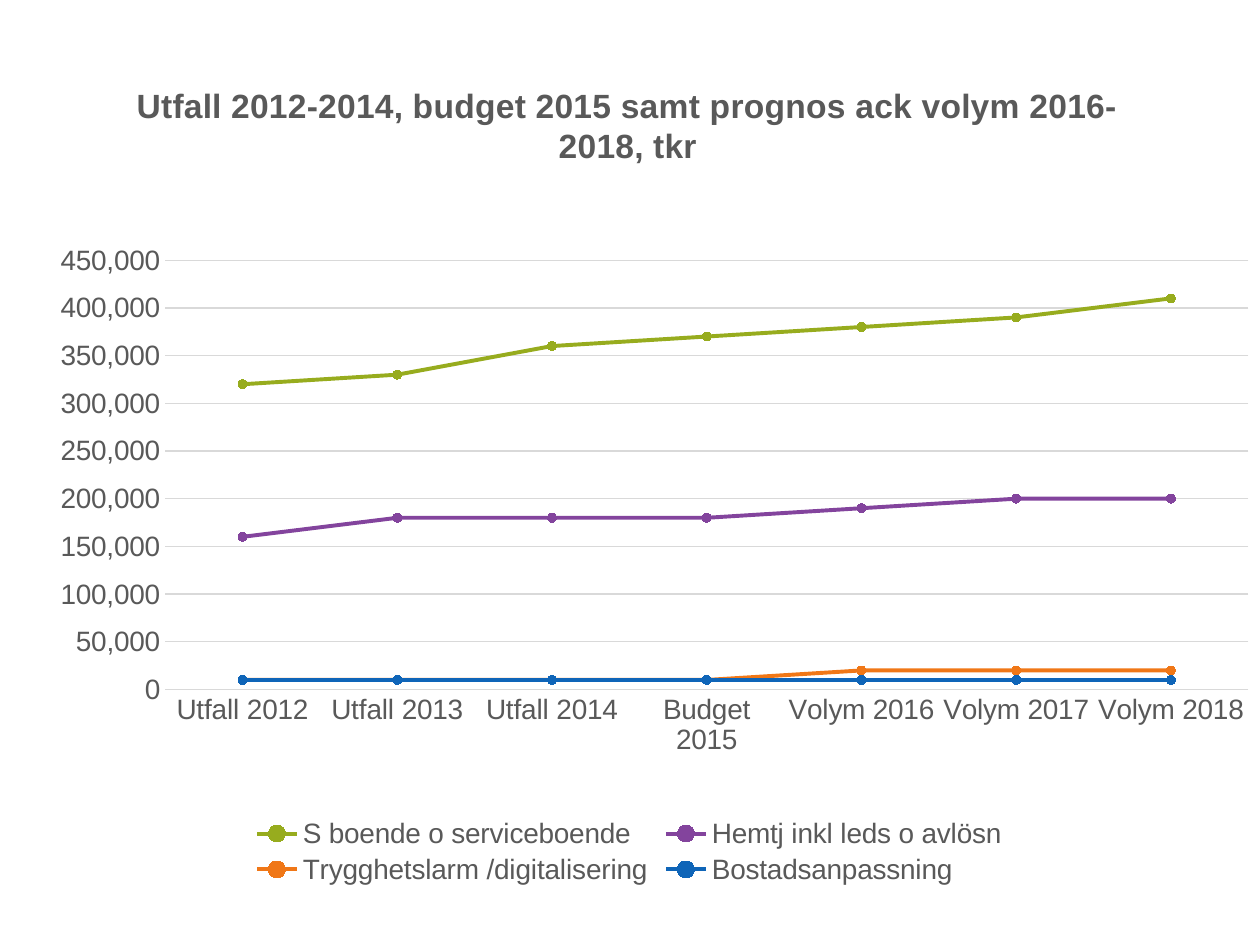
from lxml import etree
from pptx import Presentation
from pptx.chart.data import CategoryChartData
from pptx.dml.color import RGBColor
from pptx.enum.chart import XL_CHART_TYPE, XL_LEGEND_POSITION, XL_MARKER_STYLE, XL_TICK_MARK
from pptx.oxml.ns import qn
from pptx.util import Inches, Pt

LINE_MARKERS = XL_CHART_TYPE.LINE_MARKERS
BOTTOM = XL_LEGEND_POSITION.BOTTOM
CIRCLE = XL_MARKER_STYLE.CIRCLE
NO_TICK = XL_TICK_MARK.NONE

SLIDE_WIDTH, SLIDE_HEIGHT = Inches(10), Inches(7.5)
FONT = "Arial"
COLORS = {
    "text": "595959",
    "grid": "D9D9D9",
    "service": "97AC1E",
    "homecare": "83449D",
    "alarm": "F07717",
    "housing": "0F65B8",
}
TITLE = "Utfall 2012-2014, budget 2015 samt prognos ack volym 2016-2018, tkr"
PERIODS = ["Utfall 2012", "Utfall 2013", "Utfall 2014", "Budget 2015",
           "Volym 2016", "Volym 2017", "Volym 2018"]
COSTS = [
    ("S boende o serviceboende", "service",
     [320000, 330000, 360000, 370000, 380000, 390000, 410000]),
    ("Hemtj inkl leds o avlösn", "homecare",
     [160000, 180000, 180000, 180000, 190000, 200000, 200000]),
    ("Trygghetslarm /digitalisering", "alarm",
     [10000, 10000, 10000, 10000, 20000, 20000, 20000]),
    ("Bostadsanpassning", "housing", [10000] * len(PERIODS)),
]


def color(name):
    """Return the named palette colour."""
    return RGBColor.from_string(COLORS[name])


def style_font(font, size=16, bold=False):
    """Apply the common chart typeface."""
    font.name = FONT
    font.size = Pt(size)
    font.bold = bold
    font.color.rgb = color("text")


def style_line(line, name, width):
    """Set the colour and width of a line."""
    line.color.rgb = color(name)
    line.width = Pt(width)


def set_layout(parent, **settings):
    """Place a chart part by shares of the chart's size."""
    layout = parent.find(qn("c:layout"))
    if layout is None:
        layout = etree.Element(qn("c:layout"))
        parent.insert(1 if parent.tag == qn("c:title") else 0, layout)
    for child in list(layout):
        layout.remove(child)
    manual = etree.SubElement(layout, qn("c:manualLayout"))
    for tag, value in settings.items():
        etree.SubElement(manual, qn(f"c:{tag}")).set("val", str(value))


def add_cost_chart(slide):
    """Add the line chart with its cost series."""
    data = CategoryChartData(number_format="#,##0")
    data.categories = PERIODS
    for name, _, values in COSTS:
        data.add_series(name, values)
    chart = slide.shapes.add_chart(
        LINE_MARKERS, int(SLIDE_WIDTH * -0.008), int(SLIDE_HEIGHT * 0.058),
        int(SLIDE_WIDTH * 1.015), int(SLIDE_HEIGHT * 0.884), data).chart
    style_font(chart.font)
    chart.plots[0].vary_by_categories = False
    for series, (_, name, _) in zip(chart.plots[0].series, COSTS):
        style_series(series, name)
    set_layout(chart.plots[0]._element.getparent(), layoutTarget="inner",
               xMode="edge", yMode="edge", x=0.137, y=0.246, w=0.847, h=0.514)
    return chart


def style_series(series, name):
    """Colour a straight line and its round markers."""
    series.smooth = False
    style_line(series.format.line, name, 2.25)
    marker = series.marker
    marker.style = CIRCLE
    marker.size = 5
    marker.format.fill.solid()
    marker.format.fill.fore_color.rgb = color(name)
    style_line(marker.format.line, name, 0.75)


def style_axes(chart):
    """Format both axes and the gridlines."""
    for axis in (chart.category_axis, chart.value_axis):
        axis.major_tick_mark = axis.minor_tick_mark = NO_TICK
        style_font(axis.tick_labels.font)
    style_line(chart.category_axis.format.line, "grid", 0.75)
    amounts = chart.value_axis
    amounts.minimum_scale, amounts.maximum_scale = 0, 450000
    amounts.major_unit = 50000
    amounts.format.line.fill.background()
    style_line(amounts.major_gridlines.format.line, "grid", 0.75)
    amounts.tick_labels.number_format = "#,##0"
    amounts.tick_labels.number_format_is_linked = False


def add_title_and_legend(chart):
    """Add the bold heading and the legend at the bottom."""
    chart.has_title = True
    heading = chart.chart_title.text_frame
    heading.text = TITLE
    style_font(heading.paragraphs[0].runs[0].font, 19.2, True)
    chart.chart_title.include_in_layout = False
    set_layout(chart.chart_title._element, xMode="edge", yMode="edge", x=0.11, y=0.027)
    chart.has_legend = True
    chart.legend.position = BOTTOM
    chart.legend.include_in_layout = False
    style_font(chart.legend.font)


def main():
    """Build and save the slide."""
    deck = Presentation()
    deck.slide_width, deck.slide_height = SLIDE_WIDTH, SLIDE_HEIGHT
    chart = add_cost_chart(deck.slides.add_slide(deck.slide_layouts[6]))
    style_axes(chart)
    add_title_and_legend(chart)
    deck.save("out.pptx")


if __name__ == "__main__":
    main()
